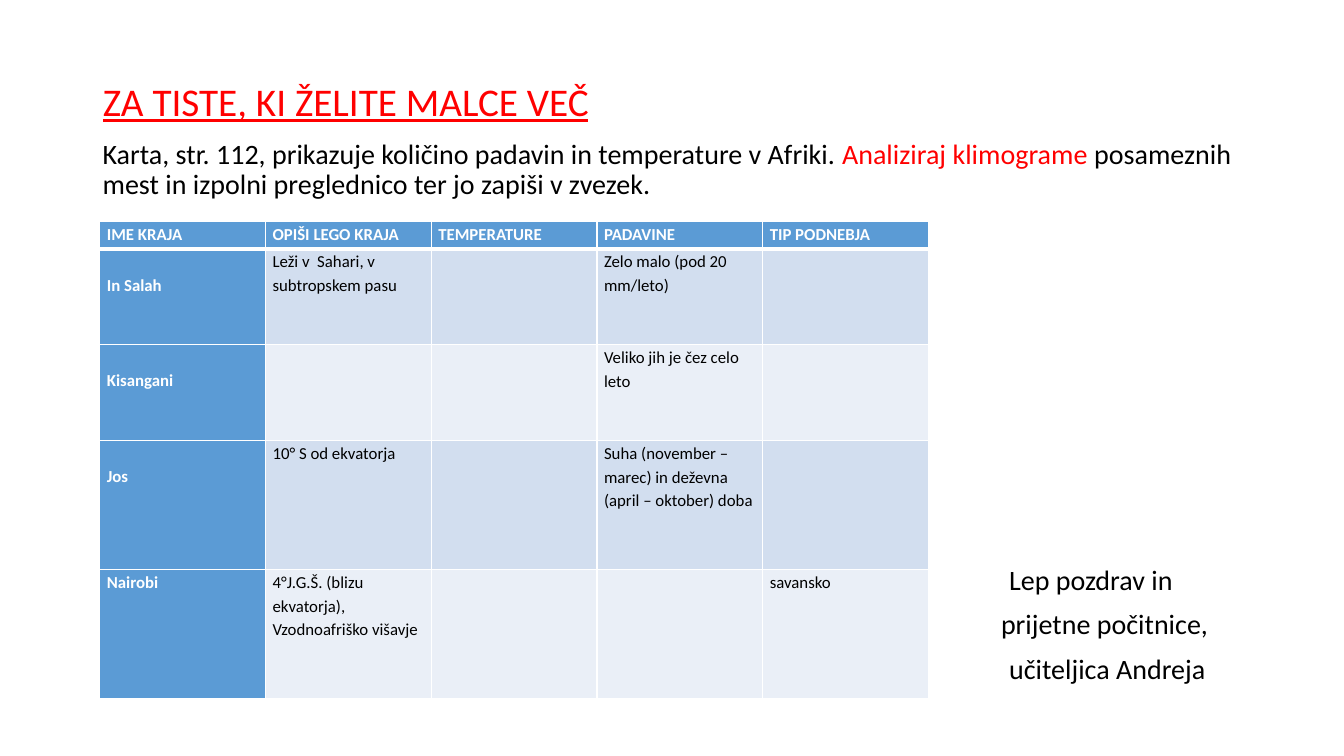
from dataclasses import dataclass

from lxml import etree
from pptx import Presentation
from pptx.dml.color import RGBColor
from pptx.enum.text import MSO_ANCHOR, MSO_AUTO_SIZE, PP_ALIGN
from pptx.oxml.ns import qn
from pptx.util import Inches, Pt

LEFT, TOP, NO_AUTOFIT = PP_ALIGN.LEFT, MSO_ANCHOR.TOP, MSO_AUTO_SIZE.NONE


@dataclass(frozen=True)
class Theme:
    font: str = "Calibri"
    red: RGBColor = RGBColor(0xFF, 0x00, 0x00)
    black: RGBColor = RGBColor(0x00, 0x00, 0x00)
    white: RGBColor = RGBColor(0xFF, 0xFF, 0xFF)
    blue: RGBColor = RGBColor(0x5B, 0x9B, 0xD5)
    bands: tuple = (RGBColor(0xD2, 0xDE, 0xEF), RGBColor(0xEA, 0xEF, 0xF7))
    title_size: Pt = Pt(28)
    body_size: Pt = Pt(20)
    table_size: Pt = Pt(12)
    thin: Pt = Pt(1)
    thick: Pt = Pt(3)


T = Theme()


def format_paragraph(p, size, color, spacing=0.9, bold=False):
    p.alignment = LEFT
    p.line_spacing = spacing
    p.font.name = T.font
    p.font.size = size
    p.font.bold = bold
    p.font.color.rgb = color


def set_border(cell, side, width):
    """Draw one white cell edge; call before the cell is filled."""
    ln = etree.SubElement(cell._tc.get_or_add_tcPr(), qn(f"a:ln{side}"), w=str(width))
    fill = etree.SubElement(ln, qn("a:solidFill"))
    etree.SubElement(fill, qn("a:srgbClr"), val=str(T.white))


prs = Presentation()
prs.slide_width, prs.slide_height = Inches(13.33), Inches(7.5)
s = prs.slides.add_slide(prs.slide_layouts[5])

# Title
title = s.shapes.title
title.left, title.top = Inches(0.92), Inches(0.77)
title.width, title.height = Inches(11.5), Inches(0.53)
tf = title.text_frame
tf.auto_size = NO_AUTOFIT
tf.vertical_anchor = TOP
tf.text = "ZA TISTE, KI ŽELITE MALCE VEČ"
format_paragraph(tf.paragraphs[0], T.title_size, T.red)
tf.paragraphs[0].font.underline = True

# Task
task = s.shapes.add_textbox(Inches(0.92), Inches(1.34), Inches(11.5), Inches(0.75))
tf = task.text_frame
tf.word_wrap = True
p = tf.paragraphs[0]
format_paragraph(p, T.body_size, T.black)
for text, color in (
    ("Karta, str. 112, prikazuje količino padavin in temperature v Afriki. ", T.black),
    ("Analiziraj klimograme ", T.red),
    ("posameznih mest in izpolni preglednico ter jo zapiši v zvezek.", T.black),
):
    r = p.add_run()
    r.text = text
    r.font.color.rgb = color

# Climate table
ROWS = (
    ("IME KRAJA", "OPIŠI LEGO KRAJA", "TEMPERATURE", "PADAVINE", "TIP PODNEBJA"),
    ("In Salah", "Leži v  Sahari, v subtropskem pasu", "", "Zelo malo (pod 20 mm/leto)", ""),
    ("Kisangani", "", "", "Veliko jih je čez celo leto", ""),
    ("Jos", "10° S od ekvatorja", "", "Suha (november – marec) in deževna (april – oktober) doba", ""),
    ("Nairobi", "4°J.G.Š. (blizu ekvatorja), Vzodnoafriško višavje", "", "", "savansko"),
)
ROW_HEIGHTS = (0.27, 0.95, 0.95, 1.28, 1.28)
LOWERED_NAMES = ("In Salah", "Kisangani", "Jos")

table = s.shapes.add_table(
    len(ROWS), len(ROWS[0]), Inches(0.99), Inches(2.2), Inches(8.22), Inches(4.73)
).table
for column in table.columns:
    column.width = Inches(8.22 / len(ROWS[0]))
for i, (height, texts) in enumerate(zip(ROW_HEIGHTS, ROWS)):
    table.rows[i].height = Inches(height)
    for j, text in enumerate(texts):
        cell = table.cell(i, j)
        heading = i == 0 or j == 0
        cell.margin_left = cell.margin_right = Inches(0.07)
        cell.margin_top = Inches(0.23 if text in LOWERED_NAMES else 0)
        cell.margin_bottom = 0
        set_border(cell, "L", T.thin)
        set_border(cell, "R", T.thin)
        set_border(cell, "T", T.thick if i == 1 else T.thin)
        set_border(cell, "B", T.thick if i == 0 else T.thin)
        cell.fill.solid()
        cell.fill.fore_color.rgb = T.blue if heading else T.bands[(i - 1) % 2]
        cell.text = text
        format_paragraph(cell.text_frame.paragraphs[0], T.table_size,
                         T.white if heading else T.black, 1.15, heading)

# Greeting
greeting = s.shapes.add_textbox(Inches(9.83), Inches(5.57), Inches(2.59), Inches(1.4))
tf = greeting.text_frame
tf.word_wrap = True
tf.text = "Lep pozdrav in\nprijetne počitnice,\nučiteljica Andreja"
for p, indent in zip(tf.paragraphs, (0.08, 0, 0.08)):
    format_paragraph(p, T.body_size, T.black)
    p.space_before = Pt(10)
    p._p.get_or_add_pPr().set("marL", str(Inches(indent)))

prs.save("out.pptx")
